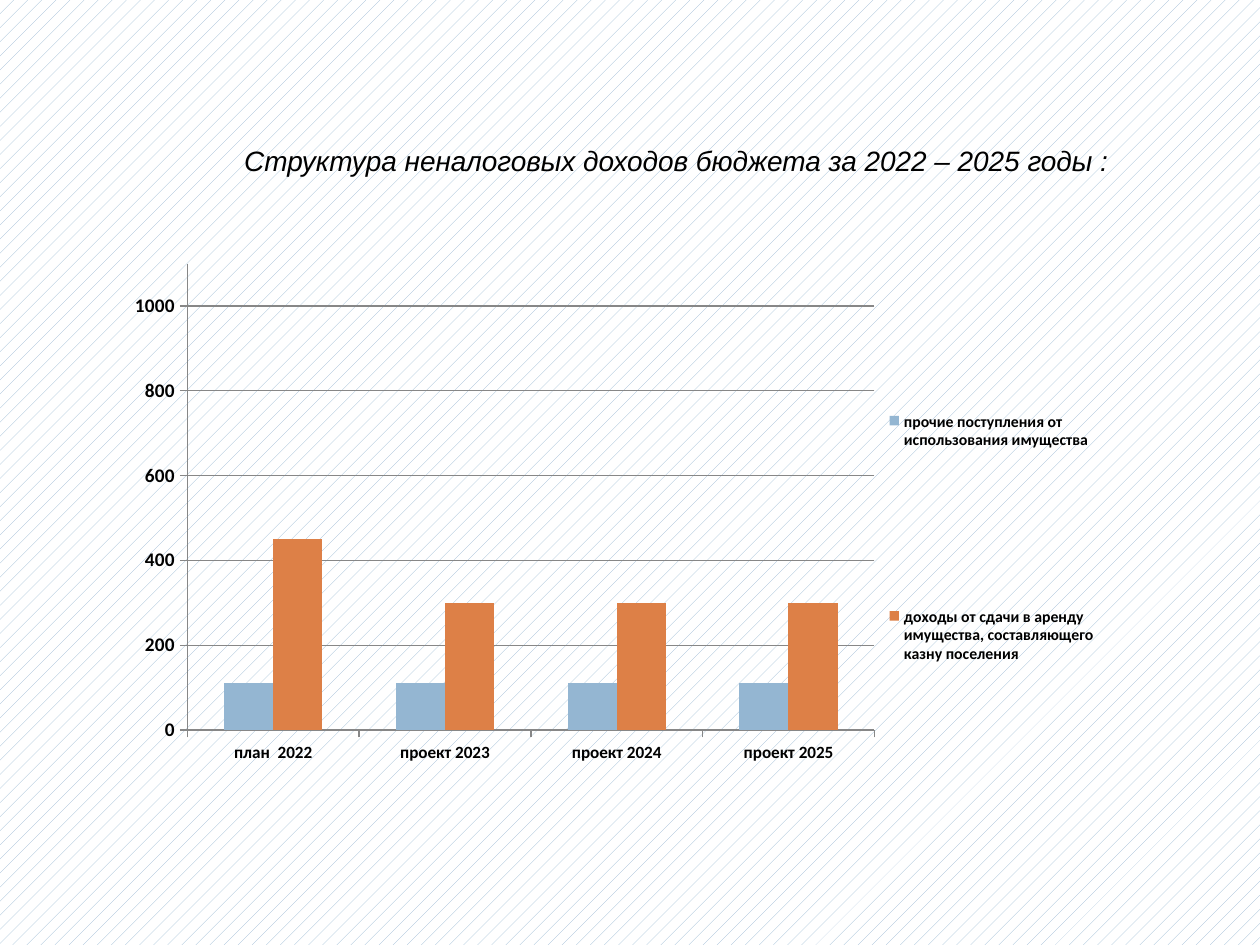
from lxml import etree
from pptx import Presentation
from pptx.chart.data import CategoryChartData
from pptx.dml.color import RGBColor
from pptx.enum import chart as charts, dml, text
from pptx.oxml import ns
from pptx.util import Inches, Pt


def color(value):
    return RGBColor.from_string(value)


def set_layout(parent, position, inner=False):
    for old in parent.findall(ns.qn("c:layout")):
        parent.remove(old)
    layout = etree.Element(ns.qn("c:layout"))
    manual = etree.SubElement(layout, ns.qn("c:manualLayout"))
    settings = [("layoutTarget", "inner")] if inner else []
    settings += [("xMode", "edge"), ("yMode", "edge")]
    settings += zip("xywh", position)
    for tag, value in settings:
        etree.SubElement(manual, ns.qn(f"c:{tag}")).set("val", str(value))
    parent.insert(0 if inner else 1, layout)


deck = Presentation()
deck.slide_width, deck.slide_height = Inches(10), Inches(7.5)
slide = deck.slides.add_slide(deck.slide_layouts[6])

backdrop = slide.background.fill
backdrop.patterned()
backdrop.pattern = dml.MSO_PATTERN.PERCENT_10
backdrop.fore_color.rgb = color("94B6D2")
backdrop.back_color.rgb = color("FFFFFF")

title = slide.shapes.add_textbox(Inches(1.54), Inches(1.09), Inches(7.4), Inches(0.67)).text_frame
title.word_wrap = True
title.vertical_anchor = text.MSO_ANCHOR.TOP
heading = title.paragraphs[0]
heading._p.get_or_add_pPr().set("indent", str(Inches(0.3)))
wording = heading.add_run()
wording.text = "Структура неналоговых доходов бюджета за 2022 – 2025 годы :"
wording.font.name = "Arial"
wording.font.size = Pt(16)
wording.font.italic = True
wording.font.color.rgb = color("000000")

incomes = [
    ("прочие поступления от использования имущества", (110, 110, 110, 110), "94B6D2"),
    ("доходы от сдачи в аренду имущества, составляющего казну поселения", (450, 300, 300, 300), "DD8047"),
]
budget = CategoryChartData()
budget.categories = ["план  2022", "проект 2023", "проект 2024", "проект 2025"]
for name, values, _ in incomes:
    budget.add_series(name, values)
revenue = slide.shapes.add_chart(
    charts.XL_CHART_TYPE.COLUMN_CLUSTERED, Inches(0.8), Inches(1.82), Inches(8.08), Inches(4.95), budget
).chart
revenue.has_title = False
revenue.font.name = "Calibri"
revenue.font.size = Pt(12.3)
revenue.font.color.rgb = color("000000")

columns = revenue.plots[0]
columns.gap_width = 150
columns.overlap = 0
columns.vary_by_categories = False
for series, (_, _, shade) in zip(columns.series, incomes):
    series.format.fill.solid()
    series.format.fill.fore_color.rgb = color(shade)

years, amounts = revenue.category_axis, revenue.value_axis
amounts.minimum_scale, amounts.maximum_scale, amounts.major_unit = 0, 1100, 200
amounts.has_major_gridlines = True
revenue.has_legend = True
legend = revenue.legend
legend.position = charts.XL_LEGEND_POSITION.RIGHT
legend.include_in_layout = False

for font, size in ((years.tick_labels.font, 9.8), (amounts.tick_labels.font, 11), (legend.font, 9)):
    font.name = "Calibri"
    font.size = Pt(size)
    font.bold = True
    font.color.rgb = color("000000")
for axis in (years, amounts):
    axis.major_tick_mark = charts.XL_TICK_MARK.OUTSIDE
for rule in (years.format.line, amounts.format.line, amounts.major_gridlines.format.line):
    rule.color.rgb = color("878787")
    rule.width = Pt(0.75)

set_layout(columns._element.getparent(), (0.085, 0.055, 0.675, 0.748), inner=True)
set_layout(legend._element, (0.77, 0.04, 0.21, 0.91))

deck.save("out.pptx")
